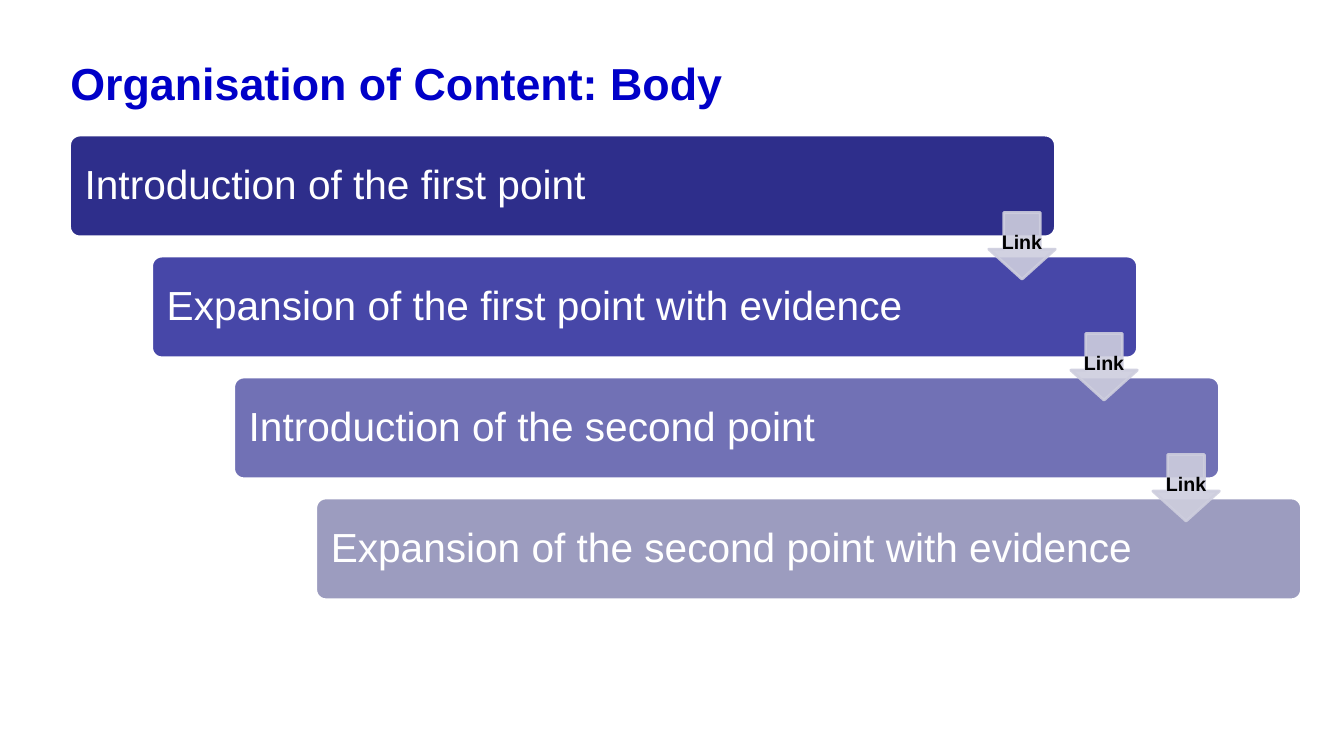
from dataclasses import dataclass

from lxml.etree import SubElement
from pptx import Presentation
from pptx.dml.color import RGBColor
from pptx.enum.shapes import MSO_SHAPE
from pptx.enum.text import MSO_ANCHOR, PP_ALIGN
from pptx.oxml.ns import qn
from pptx.shapes.autoshape import Shape
from pptx.slide import Slide
from pptx.util import Pt

WHITE = RGBColor(0xFF, 0xFF, 0xFF)
BLACK = RGBColor(0x00, 0x00, 0x00)
TITLE_BLUE = RGBColor(0x00, 0x00, 0xC8)
ARROW_GREY = RGBColor(0xCE, 0xCE, 0xDE)

BAR_LEFT, BAR_TOP, BAR_WIDTH, BAR_HEIGHT = 49.7, 96.5, 704.2, 72.7
STEP_X, STEP_Y = 58.6, 86.4
ARROW_LEFT, ARROW_TOP, ARROW_SIZE = 706.3, 151.9, 47.5
LABEL_LEFT, LABEL_TOP, LABEL_WIDTH, LABEL_HEIGHT = 708.5, 160.5, 57, 24.5
BAR_INSET = 8.64


@dataclass(frozen=True)
class Stage:
    text: str
    fill: RGBColor


STAGES = [
    Stage("Introduction of the first point", RGBColor(0x2E, 0x2E, 0x8B)),
    Stage("Expansion of the first point with evidence", RGBColor(0x47, 0x47, 0xA8)),
    Stage("Introduction of the second point", RGBColor(0x71, 0x71, 0xB5)),
    Stage("Expansion of the second point with evidence", RGBColor(0x9C, 0x9C, 0xBF)),
]


def write(sp: Shape, text: str, size: float, color: RGBColor, bold: bool = False) -> None:
    p = sp.text_frame.paragraphs[0]
    p.alignment = PP_ALIGN.LEFT
    r = p.add_run()
    r.text = text
    r.font.name = "Arial"
    r.font.size = Pt(size)
    r.font.bold = bold
    r.font.color.rgb = color


def add_block(s: Slide, kind: MSO_SHAPE, left: float, top: float, width: float,
              height: float, fill: RGBColor, line: RGBColor) -> Shape:
    sp = s.shapes.add_shape(kind, Pt(left), Pt(top), Pt(width), Pt(height))
    sp.shadow.inherit = False
    sp.fill.solid()
    sp.fill.fore_color.rgb = fill
    sp.line.color.rgb = line
    sp.line.width = Pt(2)
    return sp


def add_bar(s: Slide, i: int, stage: Stage) -> None:
    sp = add_block(s, MSO_SHAPE.ROUNDED_RECTANGLE, BAR_LEFT + i * STEP_X,
                   BAR_TOP + i * STEP_Y, BAR_WIDTH, BAR_HEIGHT, stage.fill, WHITE)
    sp.adjustments[0] = 0.1
    tf = sp.text_frame
    tf.word_wrap = True
    tf.vertical_anchor = MSO_ANCHOR.MIDDLE
    tf.margin_left = tf.margin_right = Pt(BAR_INSET)
    tf.margin_top = tf.margin_bottom = Pt(BAR_INSET)
    tf.paragraphs[0].line_spacing = 0.9
    write(sp, stage.text, 29, WHITE)


def add_arrow(s: Slide, i: int) -> None:
    sp = add_block(s, MSO_SHAPE.DOWN_ARROW, ARROW_LEFT + i * STEP_X,
                   ARROW_TOP + i * STEP_Y, ARROW_SIZE, ARROW_SIZE, ARROW_GREY, ARROW_GREY)
    sp.adjustments[0] = 0.55
    sp.adjustments[1] = 0.45
    for clr in sp._element.spPr.iter(qn("a:srgbClr")):
        SubElement(clr, qn("a:alpha")).set("val", "90000")


def add_text(s: Slide, left: float, top: float, width: float, height: float,
             text: str, size: float, color: RGBColor) -> Shape:
    sp = s.shapes.add_textbox(Pt(left), Pt(top), Pt(width), Pt(height))
    sp.text_frame.word_wrap = True
    write(sp, text, size, color, bold=True)
    return sp


def main() -> None:
    prs = Presentation()
    prs.slide_width, prs.slide_height = Pt(960), Pt(540)
    s = prs.slides.add_slide(prs.slide_layouts[6])

    title = add_text(s, 43.2, 33.8, 866.9, 51.1, "Organisation of Content: Body", 32, TITLE_BLUE)
    title.text_frame.vertical_anchor = MSO_ANCHOR.MIDDLE

    for i, stage in enumerate(STAGES):
        add_bar(s, i, stage)
    links = range(len(STAGES) - 1)
    for i in links:
        add_arrow(s, i)
    for i in links:
        add_text(s, LABEL_LEFT + i * STEP_X, LABEL_TOP + i * STEP_Y,
                 LABEL_WIDTH, LABEL_HEIGHT, "Link", 14, BLACK)

    prs.save("out.pptx")


if __name__ == "__main__":
    main()
